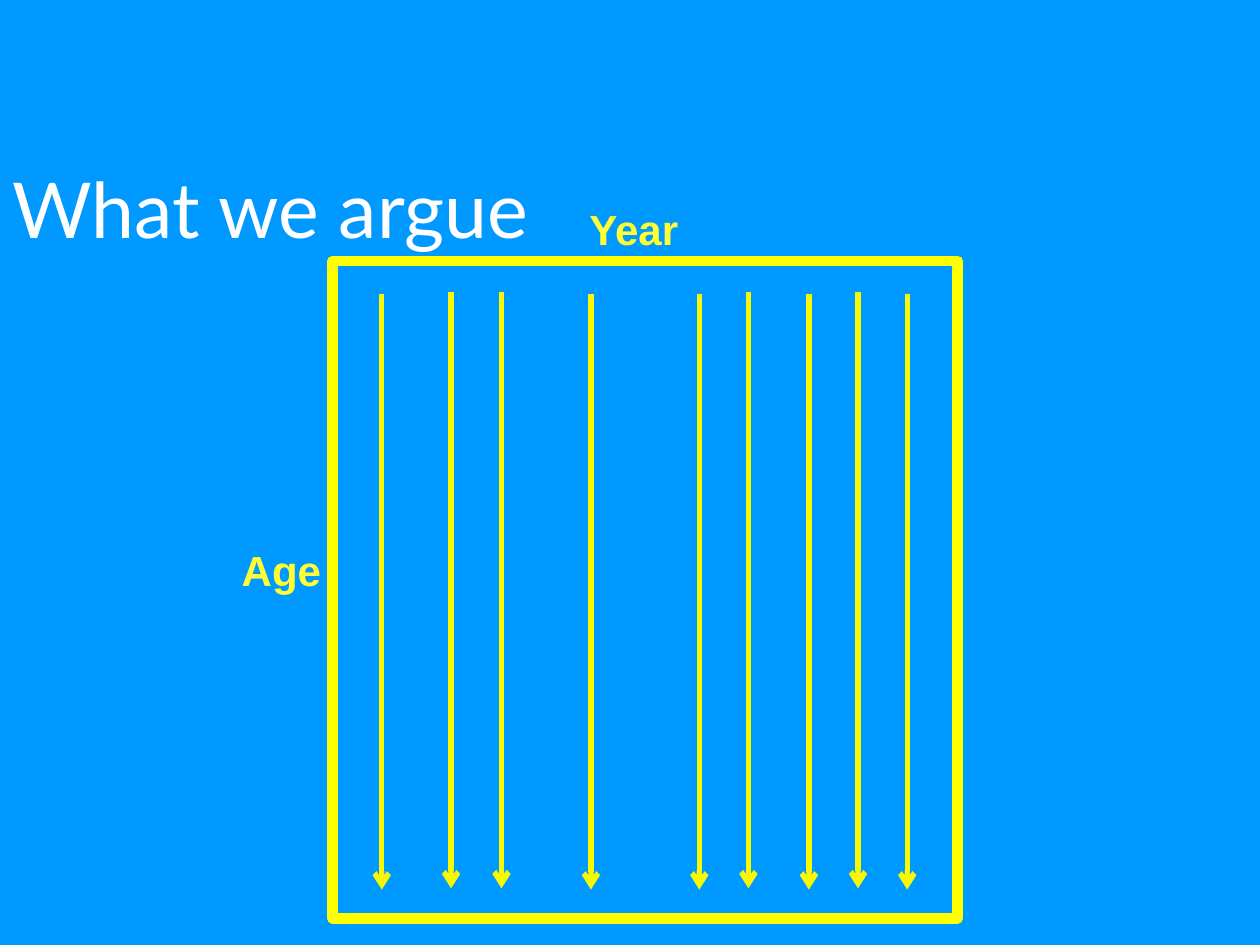
from dataclasses import dataclass

import pptx
import pptx.dml.color
import pptx.enum.shapes
import pptx.enum.text
import pptx.oxml.ns
import pptx.util
from lxml import etree


@dataclass(frozen=True)
class Theme:
    background: str = "0099FF"
    title: str = "FFFFFF"
    label: str = "FFFF33"
    frame: str = "FFFF00"
    arrow: str = "F9F900"
    title_font: str = "Lato"
    label_font: str = "Arial"
    title_size: int = 44
    label_size: int = 24
    frame_width: int = 6
    arrow_width: int = 3


@dataclass(frozen=True)
class Area:
    column: float
    row: float
    columns: float
    rows: float


@dataclass(frozen=True)
class AxisLabel:
    text: str
    area: Area


@dataclass(frozen=True)
class Cohort:
    column: float
    first_row: float


THEME = Theme()
COLUMNS, ROWS = 100, 75
SLIDE_WIDTH, SLIDE_HEIGHT = pptx.util.Inches(10), pptx.util.Inches(7.5)

TITLE_AREA = Area(0, 12.3, 100, 8.4)
FRAME_AREA = Area(26.4, 20.7, 49.6, 52.2)
AXIS_LABELS = [
    AxisLabel("Age", Area(18.2, 42.7, 8.4, 5)),
    AxisLabel("Year", Area(45.8, 15.7, 9.3, 5)),
]
COHORT_ROWS = 47.3
COHORTS = [
    Cohort(30.3, 23.3),
    Cohort(35.8, 23.2),
    Cohort(39.8, 23.2),
    Cohort(46.9, 23.3),
    Cohort(55.5, 23.3),
    Cohort(59.4, 23.2),
    Cohort(64.2, 23.3),
    Cohort(68.1, 23.2),
    Cohort(72, 23.3),
]


def across(columns: float) -> int:
    return round(SLIDE_WIDTH * columns / COLUMNS)


def down(rows: float) -> int:
    return round(SLIDE_HEIGHT * rows / ROWS)


def bounds(area: Area) -> tuple[int, int, int, int]:
    return across(area.column), down(area.row), across(area.columns), down(area.rows)


def colour(value: str) -> pptx.dml.color.RGBColor:
    return pptx.dml.color.RGBColor.from_string(value)


def write(frame, text: str, font_name: str, size: int, ink: str, bold: bool) -> None:
    frame.text = text
    paragraph = frame.paragraphs[0]
    paragraph.alignment = pptx.enum.text.PP_ALIGN.LEFT
    font = paragraph.runs[0].font
    font.name = font_name
    font.size = pptx.util.Pt(size)
    font.bold = bold
    font.color.rgb = colour(ink)


def draw_title(slide, text: str, area: Area) -> None:
    title = slide.shapes.title
    title.left, title.top, title.width, title.height = bounds(area)
    frame = title.text_frame
    write(frame, text, THEME.title_font, THEME.title_size, THEME.title, False)
    frame.word_wrap = True
    frame.vertical_anchor = pptx.enum.text.MSO_ANCHOR.TOP
    frame.auto_size = pptx.enum.text.MSO_AUTO_SIZE.SHAPE_TO_FIT_TEXT


def draw_frame(slide, area: Area) -> None:
    frame = slide.shapes.add_shape(
        pptx.enum.shapes.MSO_SHAPE.RECTANGLE, *bounds(area)
    )
    frame.shadow.inherit = False
    frame.fill.background()
    frame.line.color.rgb = colour(THEME.frame)
    frame.line.width = pptx.util.Pt(THEME.frame_width)


def draw_cohort(slide, cohort: Cohort) -> None:
    column = across(cohort.column)
    arrow = slide.shapes.add_connector(
        pptx.enum.shapes.MSO_CONNECTOR.STRAIGHT,
        column,
        down(cohort.first_row),
        column,
        down(cohort.first_row + COHORT_ROWS),
    )
    arrow.line.color.rgb = colour(THEME.arrow)
    arrow.line.width = pptx.util.Pt(THEME.arrow_width)
    qn = pptx.oxml.ns.qn
    properties = arrow.element.spPr
    etree.SubElement(properties.find(qn("a:ln")), qn("a:tailEnd"), type="arrow")
    etree.SubElement(properties, qn("a:effectLst"))


def draw_axis_label(slide, label: AxisLabel) -> None:
    frame = slide.shapes.add_textbox(*bounds(label.area)).text_frame
    write(frame, label.text, THEME.label_font, THEME.label_size, THEME.label, True)
    frame.word_wrap = False
    frame.auto_size = pptx.enum.text.MSO_AUTO_SIZE.SHAPE_TO_FIT_TEXT


def main() -> None:
    deck = pptx.Presentation()
    deck.slide_width, deck.slide_height = SLIDE_WIDTH, SLIDE_HEIGHT
    slide = deck.slides.add_slide(deck.slide_layouts.get_by_name("Title Only"))
    slide.background.fill.solid()
    slide.background.fill.fore_color.rgb = colour(THEME.background)

    draw_title(slide, "What we argue", TITLE_AREA)
    draw_frame(slide, FRAME_AREA)
    for cohort in COHORTS:
        draw_cohort(slide, cohort)
    for label in AXIS_LABELS:
        draw_axis_label(slide, label)
    deck.save("out.pptx")


if __name__ == "__main__":
    main()
